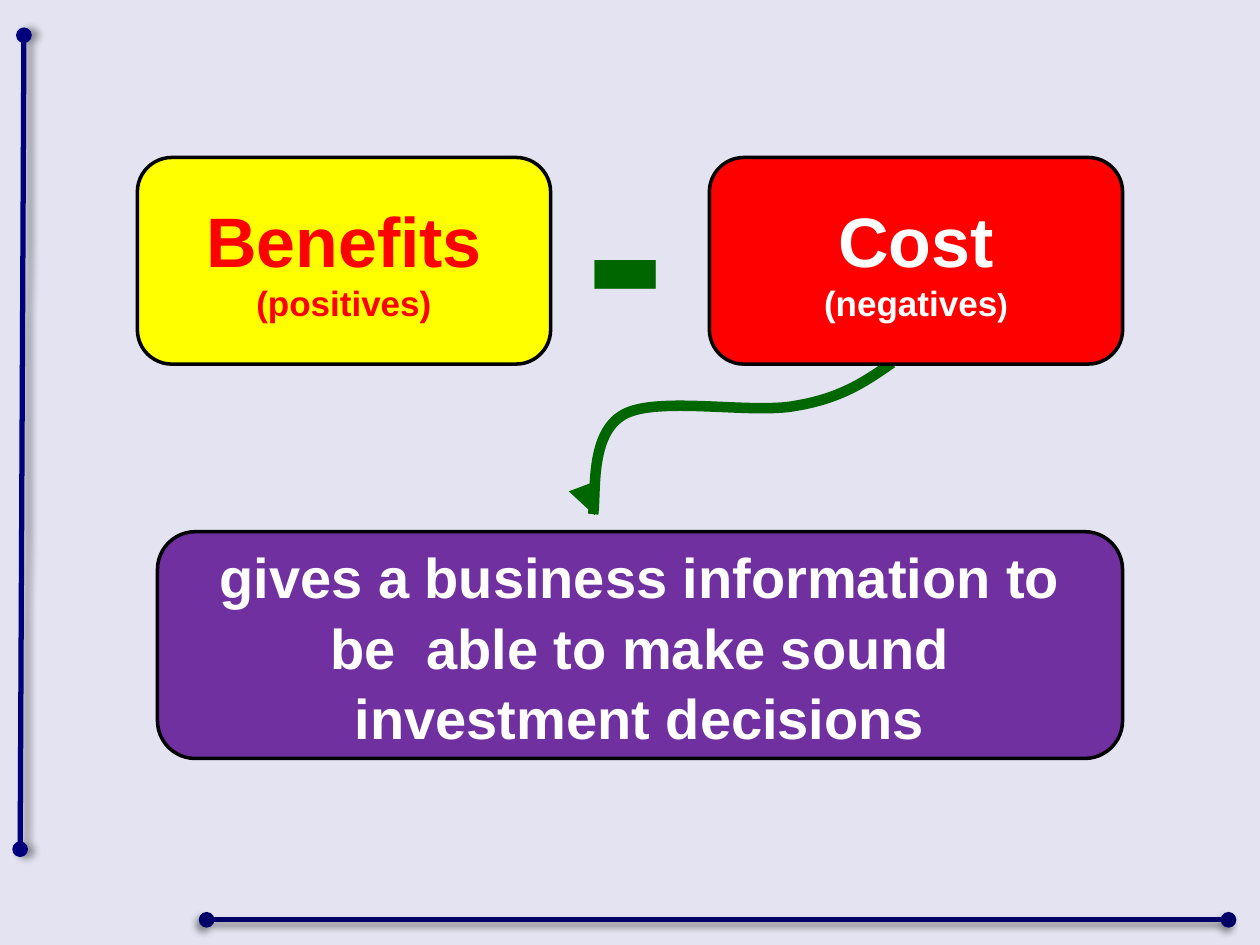
from dataclasses import dataclass

from lxml import etree
from pptx import Presentation
from pptx.dml.color import RGBColor
from pptx.enum import shapes, text
from pptx.oxml import ns
from pptx.util import Inches, Pt

FONT = "Arial"
COLORS = {
    "background": "E3E3F1", "navy": "00007D", "dark navy": "000066",
    "green": "006600", "red": "FF0000", "yellow": "FFFF00",
    "purple": "7030A0", "white": "FFFFFF", "black": "000000",
}


@dataclass
class Rule:
    start: tuple[float, float]
    end: tuple[float, float]
    color: str
    shadow_angle: int


@dataclass
class Block:
    box: tuple[float, float, float, float]
    color: str
    paragraphs: list[list[tuple[str, int]]]  # runs of (text, size)
    fill: str | None = None
    spacing: float = 1.0


RULES = [
    Rule((0.19, 0.28), (0.16, 6.74), "navy", 0),
    Rule((1.64, 7.3), (9.75, 7.3), "dark navy", 135),
]
# Start point, then three points for each Bezier segment
ARROW = [
    (7.08, 2.88),
    (6.88, 3.02), (6.68, 3.16), (6.32, 3.22),
    (5.97, 3.29), (5.22, 3.14), (4.95, 3.29),
    (4.68, 3.44), (4.74, 3.99), (4.7, 4.12),
    (4.66, 4.26), (4.69, 4.18), (4.72, 4.09),
]
BLOCKS = [
    Block((5.63, 1.25, 3.28, 1.64), "white",
          [[("Cost", 40)], [("(negatives", 20), (")", 18)]], "red"),
    Block((1.09, 1.25, 3.28, 1.64), "red",
          [[("Benefits", 40)], [("(positives)", 20)]], "yellow"),
    Block((4.38, 1.48, 1.17, 0.86), "green", [[("-", 138)]]),
    Block((1.25, 4.22, 7.66, 1.8), "white",
          [[("gives a business information to be  able to make sound "
             "investment decisions", 32)]], "purple", 1.05),
]


def rgb(name: str) -> RGBColor:
    return RGBColor.from_string(COLORS[name])


def style_line(line, color: str, width: float, **ends: str) -> None:
    """Set the stroke; ends maps headEnd and tailEnd to arrowhead types."""
    line.color.rgb = rgb(color)
    line.width = Pt(width)
    for tag, kind in ends.items():
        etree.SubElement(line._get_or_add_ln(), ns.qn(f"a:{tag}"), type=kind)


def add_rule(s, rule: Rule) -> None:
    points = [Inches(v) for v in rule.start + rule.end]
    cx = s.shapes.add_connector(shapes.MSO_CONNECTOR.STRAIGHT, *points)
    style_line(cx.line, rule.color, 3, headEnd="oval", tailEnd="oval")
    effects = etree.SubElement(cx._element.spPr, ns.qn("a:effectLst"))
    shadow = etree.SubElement(
        effects, ns.qn("a:outerShdw"), blurRad=str(Pt(4)), dist=str(Pt(3)),
        dir=str(rule.shadow_angle * 60000), algn="ctr", rotWithShape="0")
    color = etree.SubElement(shadow, ns.qn("a:srgbClr"), val=COLORS["black"])
    etree.SubElement(color, ns.qn("a:alpha"), val="40000")


def add_curved_arrow(s, points: list[tuple[float, float]]) -> None:
    start, *rest = [(Inches(x), Inches(y)) for x, y in points]
    builder = s.shapes.build_freeform(*start)
    builder.add_line_segments(rest, close=False)
    sp = builder.convert_to_shape()
    # Merge every three line segments into one Bezier segment
    lines = list(sp._element.iter(ns.qn("a:lnTo")))
    for i in range(0, len(lines), 3):
        curve = etree.SubElement(lines[i].getparent(), ns.qn("a:cubicBezTo"))
        for line in lines[i:i + 3]:
            curve.append(line[0])
            line.getparent().remove(line)
    sp.shadow.inherit = False
    sp.fill.background()
    style_line(sp.line, "green", 6, tailEnd="triangle")


def add_block(s, block: Block) -> None:
    box = [Inches(v) for v in block.box]
    if block.fill:
        sp = s.shapes.add_shape(shapes.MSO_SHAPE.ROUNDED_RECTANGLE, *box)
        sp.shadow.inherit = False
        sp.fill.solid()
        sp.fill.fore_color.rgb = rgb(block.fill)
        style_line(sp.line, "black", 2)
    else:
        sp = s.shapes.add_textbox(*box)
    tf = sp.text_frame
    tf.word_wrap = True
    tf.vertical_anchor = text.MSO_ANCHOR.MIDDLE
    for i, runs in enumerate(block.paragraphs):
        p = tf.add_paragraph() if i else tf.paragraphs[0]
        p.alignment = text.PP_ALIGN.CENTER
        p.line_spacing = block.spacing
        p.font.name = FONT
        p.font.bold = True
        p.font.size = Pt(runs[0][1])
        p.font.color.rgb = rgb(block.color)
        for words, size in runs:
            r = p.add_run()
            r.text = words
            if size != runs[0][1]:
                r.font.size = Pt(size)


def main() -> None:
    prs = Presentation()
    prs.slide_width, prs.slide_height = Inches(10), Inches(7.5)
    s = prs.slides.add_slide(prs.slide_layouts[6])
    s.background.fill.solid()
    s.background.fill.fore_color.rgb = rgb("background")

    # Border rules
    for rule in RULES:
        add_rule(s, rule)

    # Arrow runs behind the blocks
    add_curved_arrow(s, ARROW)
    for block in BLOCKS:
        add_block(s, block)

    prs.save("out.pptx")


if __name__ == "__main__":
    main()
